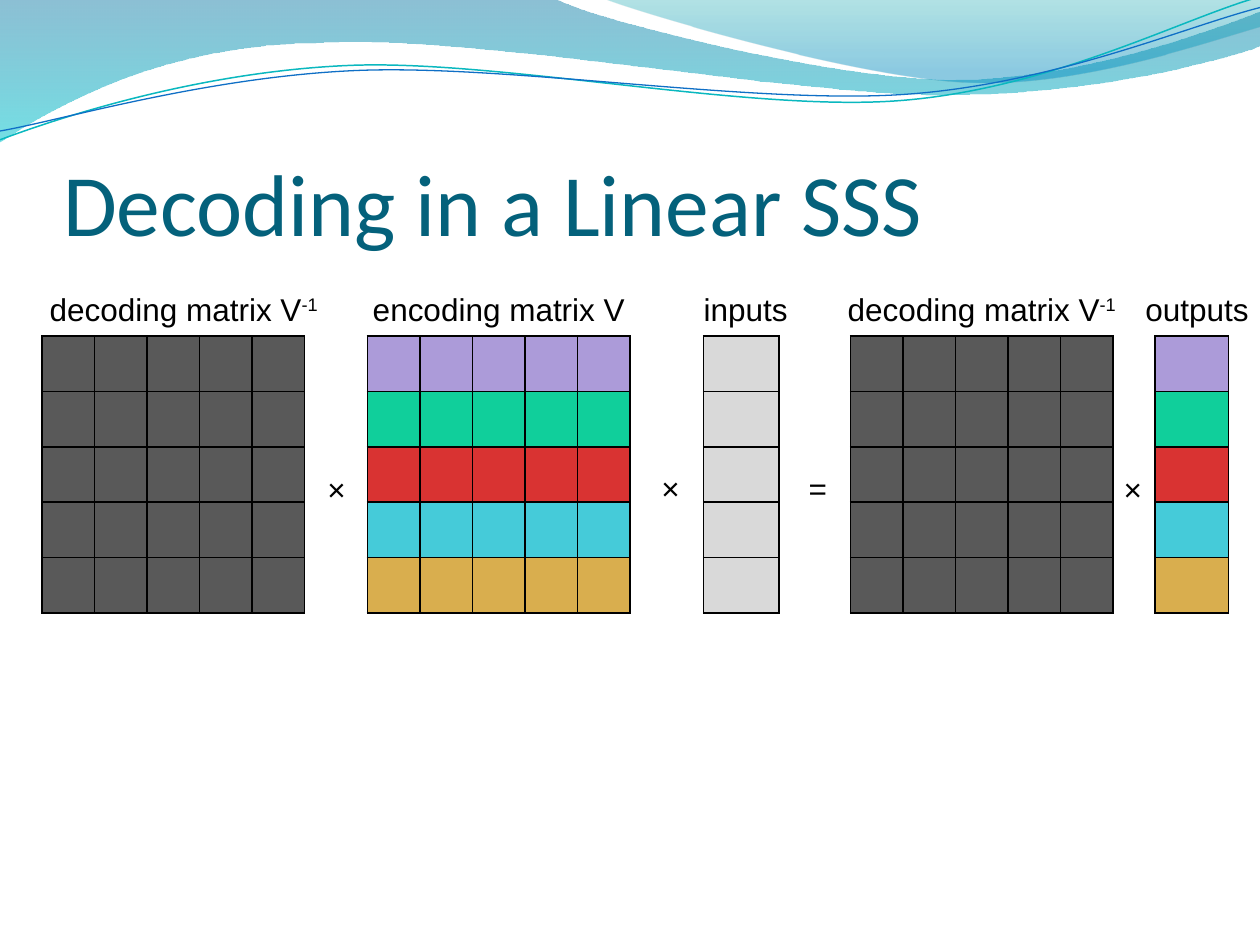
from lxml.etree import SubElement
from pptx import Presentation
from pptx.dml.color import RGBColor
from pptx.enum.text import MSO_ANCHOR, MSO_AUTO_SIZE, PP_ALIGN
from pptx.oxml.ns import qn
from pptx.util import Inches, Pt

BLACK = RGBColor(0x00, 0x00, 0x00)
TITLE_TEAL = RGBColor(0x04, 0x61, 0x7B)
DARK_GRAY = RGBColor(0x59, 0x59, 0x59)
LIGHT_GRAY = RGBColor(0xD9, 0xD9, 0xD9)
PURPLE = RGBColor(0xAC, 0x9B, 0xD9)
GREEN = RGBColor(0x10, 0xCF, 0x9B)
RED = RGBColor(0xD9, 0x33, 0x32)
CYAN = RGBColor(0x45, 0xCB, 0xD9)
GOLD = RGBColor(0xD9, 0xAE, 0x4E)
WAVE_BLUE = RGBColor(0x00, 0x74, 0xA1)
WAVE_CYAN = RGBColor(0x00, 0xC6, 0xCF)
WAVE_TEAL = RGBColor(0x00, 0xA1, 0xA9)
WAVE_SKY = RGBColor(0x00, 0x8B, 0xBF)
LINE_TEAL = RGBColor(0x0A, 0xB8, 0xBF)
LINE_BLUE = RGBColor(0x0F, 0x6F, 0xC6)

GRID = 12  # the matrices and captions sit on twelfths of an inch
ROW_HEIGHT = 0.44


def add_wave(slide, start, segments, closed):
    """Draw segments of one point (straight) or three points (cubic curve)."""
    builder = slide.shapes.build_freeform(Inches(start[0]), Inches(start[1]))
    points = [(Inches(x), Inches(y)) for segment in segments for x, y in segment]
    builder.add_line_segments(points, close=closed)
    shape = builder.convert_to_shape()
    shape.shadow.inherit = False
    # Merge each run of three line points into one curve
    lines = iter(list(shape._element.iter(qn("a:lnTo"))))
    for segment in segments:
        first, *others = [next(lines) for _ in segment]
        if others:
            outline = first.getparent()
            curve = SubElement(outline, qn("a:cubicBezTo"))
            outline.replace(first, curve)
            curve.append(first[0])
            for line in others:
                curve.append(line[0])
                outline.remove(line)
    return shape


def add_label(slide, text, left, top, width, superscript=None, wrap=True):
    box = slide.shapes.add_textbox(Inches(left), Inches(top), Inches(width), Inches(0.4))
    frame = box.text_frame
    frame.word_wrap = wrap
    frame.auto_size = MSO_AUTO_SIZE.SHAPE_TO_FIT_TEXT
    paragraph = frame.paragraphs[0]
    paragraph.alignment = PP_ALIGN.CENTER if wrap else PP_ALIGN.LEFT
    for content in filter(None, (text, superscript)):
        run = paragraph.add_run()
        run.text = content
        run.font.size = Pt(18)
        run.font.name = "Arial"
        run.font.color.rgb = BLACK
        if content == superscript:
            run.font._element.set("baseline", "30000")


presentation = Presentation()
presentation.slide_width = Inches(10)
presentation.slide_height = Inches(7.5)
slide = presentation.slides.add_slide(presentation.slide_layouts[5])

# Filled waves: start, segments, gradient stops (position, colour, opacity)
filled_waves = [
    ((0, -0.01),
     [[(4.4, -0.01)],
      [(4.76, 0.17), (6.64, 0.63), (7.58, 0.63)],
      [(8.53, 0.63), (9.58, 0.26), (10, 0.09)],
      [(10.01, 0.36)],
      [(9.83, 0.44), (8.7, 0.76), (7.46, 0.75)],
      [(6.22, 0.75), (3.82, 0.28), (2.57, 0.34)],
      [(1.29, 0.35), (0.46, 0.83), (-0.01, 1.13)],
      [(0, -0.01)]],
     [(0, WAVE_BLUE, 45), (1, WAVE_CYAN, 55)]),
    ((4.79, -0.01),
     [[(5.09, 0.11), (6.82, 0.62), (7.69, 0.65)],
      [(8.56, 0.69), (9.61, 0.32), (10, 0.21)],
      [(10, 0)],
      [(4.79, -0.01)]],
     [(0, WAVE_TEAL, 30), (0.8, WAVE_SKY, 45)]),
]
for start, segments, stops in filled_waves:
    wave = add_wave(slide, start, segments, closed=True)
    wave.line.fill.background()
    wave.fill.gradient()
    wave.fill.gradient_angle = 270
    for stop, (position, color, _) in zip(wave.fill.gradient_stops, stops):
        stop.position = position
        stop.color.rgb = color
    for element, (_, _, opacity) in zip(wave._element.iter(qn("a:srgbClr")), stops):
        SubElement(element, qn("a:alpha"), val=str(opacity * 1000))

# Thin wave lines
wave_lines = [
    ((0, 1.11),
     [[(0.48, 0.93), (1.58, 0.57), (2.77, 0.52)],
      [(3.95, 0.47), (5.93, 0.89), (7.13, 0.8)],
      [(8.33, 0.71), (9.38, 0.15), (9.98, -0.02)]], LINE_TEAL, 0.85),
    ((0, 1.04),
     [[(0.47, 0.96), (1.64, 0.61), (2.83, 0.56)],
      [(4.03, 0.51), (5.97, 0.83), (7.17, 0.75)],
      [(8.36, 0.67), (9.41, 0.21), (10, 0.06)]], LINE_BLUE, 0.75),
]
for start, segments, color, weight in wave_lines:
    wave = add_wave(slide, start, segments, closed=False)
    wave.fill.background()
    wave.line.color.rgb = color
    wave.line.width = Pt(weight)

# Title
title = slide.shapes.title
title.left, title.top, title.width, title.height = map(Inches, (0.5, 0.77, 9, 1.25))
frame = title.text_frame
frame.auto_size = MSO_AUTO_SIZE.NONE
frame.vertical_anchor = MSO_ANCHOR.BOTTOM
frame.margin_left = frame.margin_right = frame.margin_bottom = 0
frame.margin_top = Inches(0.05)
paragraph = frame.paragraphs[0]
paragraph.alignment = PP_ALIGN.LEFT
run = paragraph.add_run()
run.text = "Decoding in a Linear SSS"
run.font.size = Pt(50)
run.font.name = "Calibri"
run.font.color.rgb = TITLE_TEAL

# Matrices and vectors: left and width in grid units, columns, row colours
row_colors = [PURPLE, GREEN, RED, CYAN, GOLD]
matrices = [
    (35, 25, 5, row_colors),
    (110, 7, 1, row_colors),
    (67, 7.2, 1, [LIGHT_GRAY] * 5),
    (4, 25, 5, [DARK_GRAY] * 5),
    (81, 25, 5, [DARK_GRAY] * 5),
]
for left, width, columns, colors in matrices:
    table = slide.shapes.add_table(
        len(colors), columns, Inches(left / GRID), Inches(32 / GRID),
        Inches(width / GRID), Inches(ROW_HEIGHT * len(colors))).table
    table.first_row = table.horz_banding = False
    for row, color in zip(table.rows, colors):
        for cell in row.cells:
            properties = cell._tc.get_or_add_tcPr()
            for side in ("a:lnL", "a:lnR", "a:lnT", "a:lnB"):
                border = SubElement(properties, qn(side), w=str(Pt(1)))
                fill = SubElement(border, qn("a:solidFill"))
                SubElement(fill, qn("a:srgbClr"), val=str(BLACK))
            cell.fill.solid()
            cell.fill.fore_color.rgb = color

# Captions: left and width in grid units
for text, left, width, superscript in [
    ("decoding matrix V", 3, 29, "-1"),
    ("encoding matrix V", 34, 27, None),
    ("inputs", 63, 16, None),
    ("decoding matrix V", 79, 29, "-1"),
    ("outputs", 107, 14, None),
]:
    add_label(slide, text, left / GRID, 2.25, width / GRID, superscript)

# Operators between the matrices
for symbol, left, top in [("×", 2.5, 3.68), ("×", 5.15, 3.67),
                          ("=", 6.32, 3.67), ("×", 8.82, 3.68)]:
    add_label(slide, symbol, left, top, 0.35, wrap=False)

presentation.save("out.pptx")
